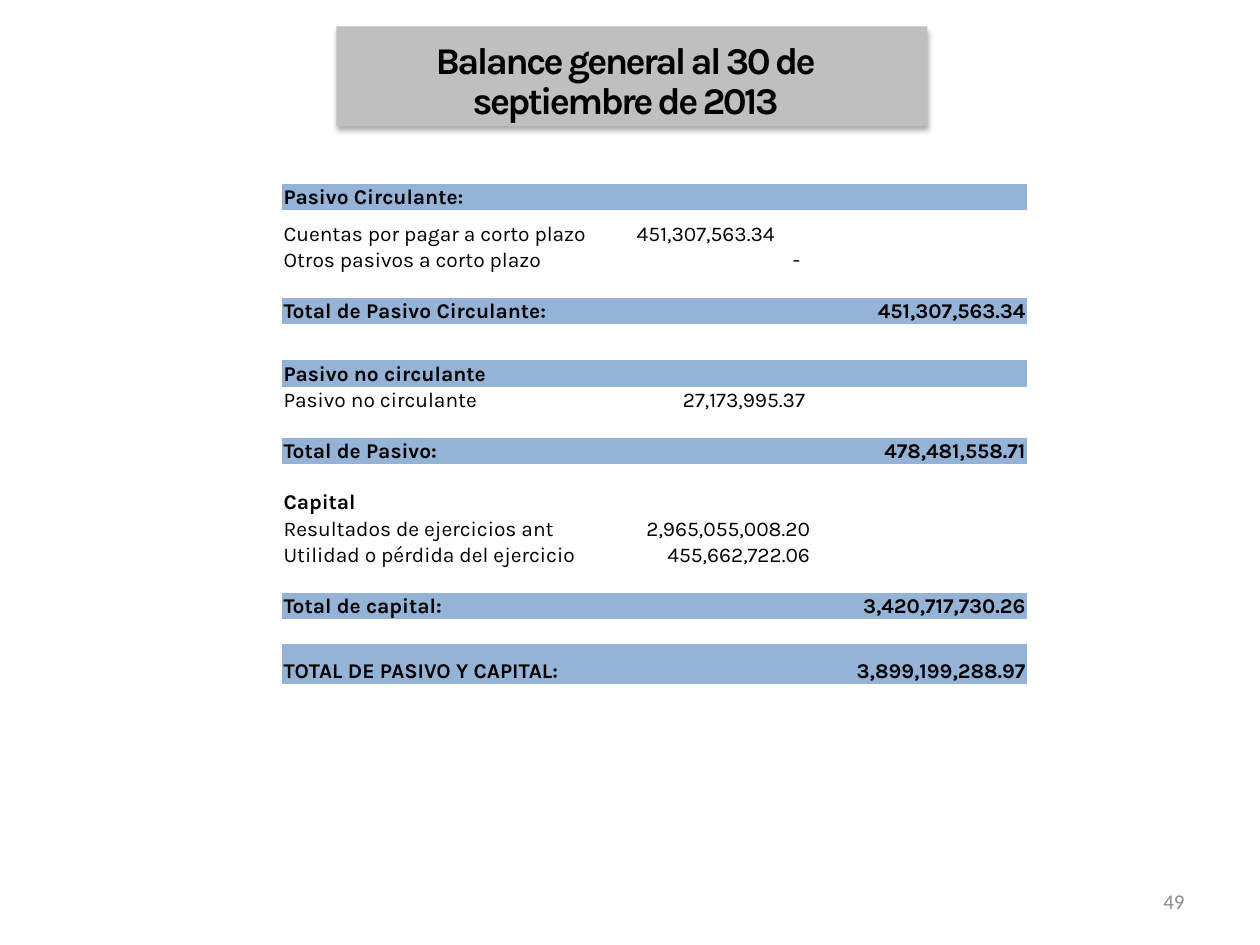
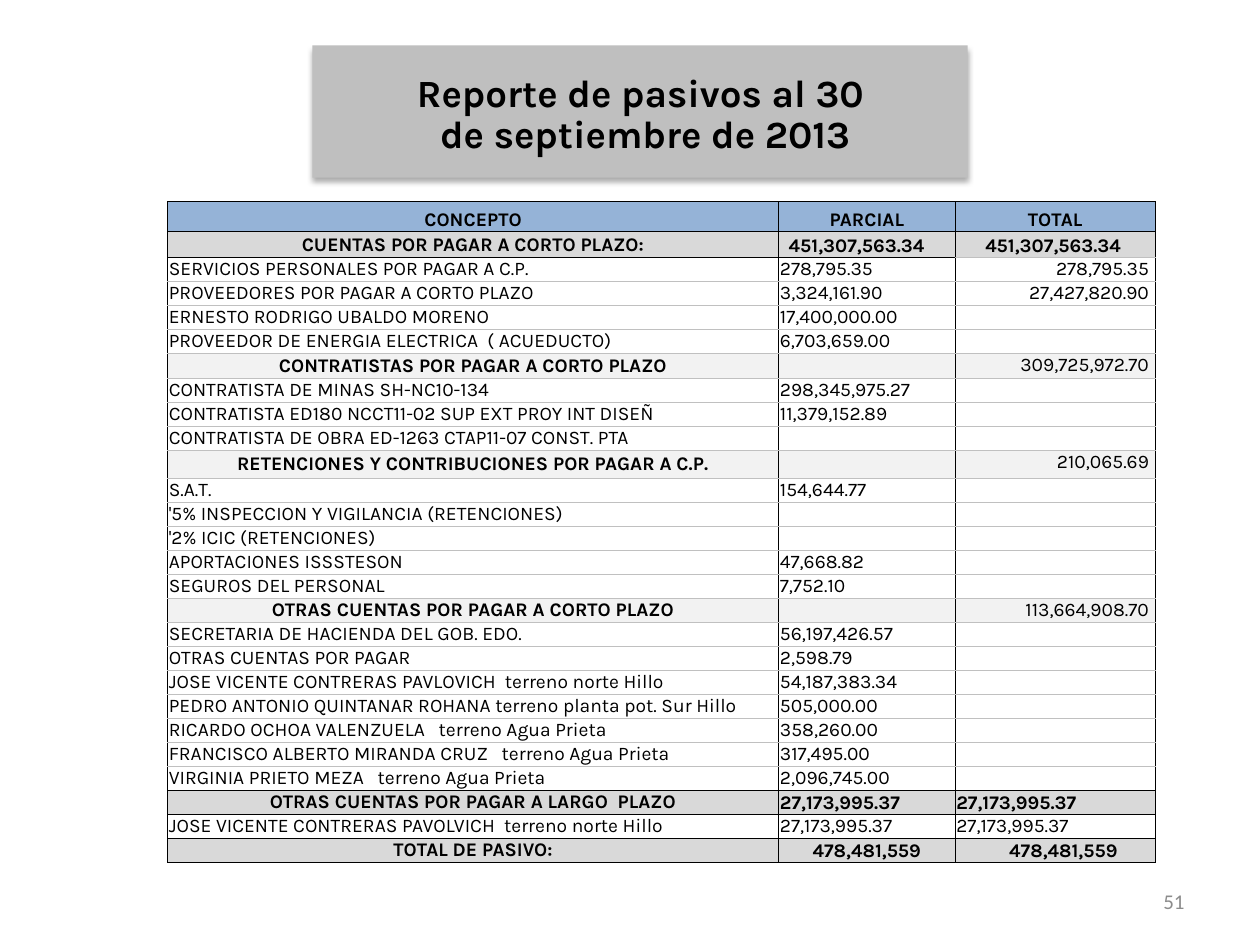
from lxml.etree import SubElement
from pptx import Presentation
from pptx.dml.color import RGBColor
from pptx.enum.shapes import MSO_SHAPE
from pptx.enum.text import MSO_ANCHOR, PP_ALIGN
from pptx.oxml.ns import qn
from pptx.util import Inches, Pt

# Content: balance sheet rows are (band or line, label, amount, total, right inset of the amount)
BALANCE_TITLE = "Balance general al 30 de\nseptiembre de 2013"
GAP = ("line", "", "", "", 0.01)
BALANCE_ROWS = [
    ("band", "Pasivo Circulante:", "", "", 0.01),
    ("line", "Cuentas por pagar a corto plazo", "451,307,563.34", "", 0.29),
    ("line", "Otros pasivos a corto plazo", "-", "", 0.09),
    GAP,
    ("band", "Total de Pasivo Circulante:", "", "451,307,563.34", 0.01),
    GAP,
    ("band", "Pasivo no circulante", "", "", 0.01),
    ("line", "Pasivo no circulante", "27,173,995.37", "", 0.05),
    GAP,
    ("band", "Total de Pasivo:", "", "478,481,558.71", 0.01),
    GAP,
    ("heading", "Capital", "", "", 0.01),
    ("line", "Resultados de ejercicios ant", "2,965,055,008.20", "", 0.01),
    ("line", "Utilidad o pérdida del ejercicio", "455,662,722.06", "", 0.01),
    GAP,
    ("band", "Total de capital:", "", "3,420,717,730.26", 0.01),
    GAP,
    ("band", "TOTAL DE PASIVO Y CAPITAL:", "", "3,899,199,288.97", 0.01),
]
BALANCE_COLUMNS = [2.72, 1.48, 1.71]
BALANCE_TALL_ROWS = {1: 0.29, 5: 0.29, 17: 0.32}

# Content: liabilities rows are (kind, concept, partial, total)
REPORT_TITLE = "Reporte de pasivos al 30 \nde septiembre de 2013"
REPORT_ROWS = [
    ("header", "CONCEPTO", "PARCIAL", "TOTAL"),
    ("total", "CUENTAS POR PAGAR A CORTO PLAZO:", "451,307,563.34", "451,307,563.34"),
    ("item", "SERVICIOS PERSONALES POR PAGAR A C.P.", "278,795.35", "278,795.35"),
    ("item", "PROVEEDORES POR PAGAR A CORTO PLAZO", "3,324,161.90", "27,427,820.90"),
    ("item", "ERNESTO RODRIGO UBALDO MORENO", "17,400,000.00", ""),
    ("item", "PROVEEDOR DE ENERGIA ELECTRICA  ( ACUEDUCTO)", "6,703,659.00", ""),
    ("section", "CONTRATISTAS POR PAGAR A CORTO PLAZO", "", "309,725,972.70"),
    ("item", "CONTRATISTA DE MINAS SH-NC10-134", "298,345,975.27", ""),
    ("item", "CONTRATISTA ED180 NCCT11-02 SUP EXT PROY INT DISEÑ", "11,379,152.89", ""),
    ("item", "CONTRATISTA DE OBRA ED-1263 CTAP11-07 CONST. PTA", "", ""),
    ("section", "RETENCIONES Y CONTRIBUCIONES POR PAGAR A C.P.", "", "210,065.69"),
    ("item", "S.A.T.", "154,644.77", ""),
    ("item", "'5% INSPECCION Y VIGILANCIA (RETENCIONES)", "", ""),
    ("item", "'2% ICIC (RETENCIONES)", "", ""),
    ("item", "APORTACIONES ISSSTESON", "47,668.82", ""),
    ("item", "SEGUROS DEL PERSONAL", "7,752.10", ""),
    ("section", "OTRAS CUENTAS POR PAGAR A CORTO PLAZO", "", "113,664,908.70"),
    ("item", "SECRETARIA DE HACIENDA DEL GOB. EDO.", "56,197,426.57", ""),
    ("item", "OTRAS CUENTAS POR PAGAR", "2,598.79", ""),
    ("item", "JOSE VICENTE CONTRERAS PAVLOVICH  terreno norte Hillo", "54,187,383.34", ""),
    ("item", "PEDRO ANTONIO QUINTANAR ROHANA terreno planta pot. Sur Hillo", "505,000.00", ""),
    ("item", "RICARDO OCHOA VALENZUELA   terreno Agua Prieta", "358,260.00", ""),
    ("item", "FRANCISCO ALBERTO MIRANDA CRUZ   terreno Agua Prieta", "317,495.00", ""),
    ("item", "VIRGINIA PRIETO MEZA   terreno Agua Prieta", "2,096,745.00", ""),
    ("total", "OTRAS CUENTAS POR PAGAR A LARGO  PLAZO", "27,173,995.37", "27,173,995.37"),
    ("item", "JOSE VICENTE CONTRERAS PAVOLVICH  terreno norte Hillo", "27,173,995.37", "27,173,995.37"),
    ("total", "TOTAL DE PASIVO:", "478,481,559", "478,481,559"),
]
REPORT_COLUMNS = [4.85, 1.4, 1.59]
REPORT_TALL_ROWS = {0: 0.24, 1: 0.2, 6: 0.2, 10: 0.22}
LONG_TERM_ROW = 24
REPORT_INDENTS = {(1, 1): 0.08, (1, 2): 0.24, (26, 1): 0.27, (26, 2): 0.43}

# Shared style
BLACK = RGBColor(0x00, 0x00, 0x00)
WHITE = RGBColor(0xFF, 0xFF, 0xFF)
BLUE = RGBColor(0x95, 0xB3, 0xD7)
TITLE_GRAY = RGBColor(0xBF, 0xBF, 0xBF)
PAGE_GRAY = RGBColor(0x8C, 0x8C, 0x8C)
RULE_GRAY = RGBColor(0xC0, 0xC0, 0xC0)
KIND_FILLS = {"header": BLUE, "total": RGBColor(0xD9, 0xD9, 0xD9),
              "section": RGBColor(0xF2, 0xF2, 0xF2), "item": WHITE}
PLAIN_TABLE_STYLE = "{2D5ABB26-0587-4C30-8999-92F81FD0307C}"
LEFT, CENTER, RIGHT = PP_ALIGN.LEFT, PP_ALIGN.CENTER, PP_ALIGN.RIGHT
TOP, MIDDLE, BOTTOM = MSO_ANCHOR.TOP, MSO_ANCHOR.MIDDLE, MSO_ANCHOR.BOTTOM


def write(frame, text, font="Karla", size=12, bold=False, color=BLACK,
          align=LEFT, line_spacing=None, tracking=None):
    para = frame.paragraphs[0]
    para.alignment = align
    para.line_spacing = line_spacing
    for number, line in enumerate(text.split("\n")):
        if number:
            para.add_line_break()
        span = para.add_run()
        span.text = line
        span.font.name, span.font.size = font, Pt(size)
        span.font.bold = bold
        span.font.color.rgb = color
        if tracking:
            span.font._element.set("spc", str(round(tracking * 100)))


def add_text(page, text, place, anchor=TOP, **style):
    box = page.shapes.add_textbox(*map(Inches, place))
    box.text_frame.word_wrap = True
    box.text_frame.vertical_anchor = anchor
    write(box.text_frame, text, **style)


def add_page(deck, title, band_place, title_place, number, **title_style):
    page = deck.slides.add_slide(deck.slide_layouts[6])
    # Gray title band with a soft shadow below it
    band = page.shapes.add_shape(MSO_SHAPE.RECTANGLE, *map(Inches, band_place))
    band.fill.solid()
    band.fill.fore_color.rgb = TITLE_GRAY
    band.line.fill.background()
    band.shadow.inherit = False
    effects = band._element.spPr.find(qn("a:effectLst"))
    shadow = SubElement(effects, qn("a:outerShdw"), blurRad=str(Pt(3.5)),
                        dist=str(Pt(2.2)), dir="5400000", rotWithShape="0")
    tint = SubElement(shadow, qn("a:srgbClr"), val=str(BLACK))
    SubElement(tint, qn("a:alpha"), val="32000")
    # Title and page number
    add_text(page, title, title_place, bold=True, align=CENTER,
             line_spacing=Pt(23), **title_style)
    add_text(page, number, (7.17, 6.95, 2.33, 0.4), anchor=MIDDLE,
             font="Calibri", color=PAGE_GRAY, align=RIGHT)
    return page


def add_grid(page, left, top, columns, heights):
    frame = page.shapes.add_table(len(heights), len(columns), Inches(left), Inches(top),
                                  Inches(sum(columns)), Inches(sum(heights)))
    table = frame.table
    table.first_row = table.horz_banding = False
    table._tbl.tblPr.find(qn("a:tableStyleId")).text = PLAIN_TABLE_STYLE
    for column, width in zip(table.columns, columns):
        column.width = Inches(width)
    for row, height in zip(table.rows, heights):
        row.height = Inches(height)
    return table


def set_borders(cell, **colors):
    for side, color in colors.items():
        line = SubElement(cell._tc.get_or_add_tcPr(), qn(f"a:ln{side}"), w=str(Pt(0.5)))
        paint = SubElement(line, qn("a:solidFill"))
        SubElement(paint, qn("a:srgbClr"), val=str(color))


def fill_cell(cell, text, fill=None, anchor=BOTTOM, left=0.01, right=0.01, **style):
    cell.margin_left, cell.margin_right = Inches(left), Inches(right)
    cell.margin_top, cell.margin_bottom = Pt(0.5), 0
    cell.vertical_anchor = anchor
    if fill is None:
        cell.fill.background()
    else:
        cell.fill.solid()
        cell.fill.fore_color.rgb = fill
    if text:
        write(cell.text_frame, text, **style)
    else:  # keeps an empty cell from stretching its row
        SubElement(cell.text_frame.paragraphs[0]._p, qn("a:endParaRPr"), sz="800")


def build_balance(deck):
    page = add_page(deck, BALANCE_TITLE, (2.67, 0.21, 4.69, 0.79),
                    (3.04, 0.28, 3.85, 0.5), "49", size=21.6, tracking=-1.5)
    heights = [BALANCE_TALL_ROWS.get(row, 0.2) for row in range(len(BALANCE_ROWS))]
    table = add_grid(page, 2.24, 1.46, BALANCE_COLUMNS, heights)
    for row, (kind, label, amount, total, inset) in enumerate(BALANCE_ROWS):
        look = dict(fill=BLUE if kind == "band" else None, bold=kind != "line")
        fill_cell(table.cell(row, 0), label, **look)
        fill_cell(table.cell(row, 1), amount, align=RIGHT, right=inset, **look)
        fill_cell(table.cell(row, 2), total, align=RIGHT, **look)


def report_format(row, column, kind):
    """Bold, alignment, anchor and insets of one cell of the liabilities table."""
    if kind == "header":
        return dict(bold=True, align=CENTER, anchor=BOTTOM)
    if column == 0:
        heading = kind != "item"
        return dict(bold=heading, align=CENTER if heading else LEFT,
                    anchor=MIDDLE if heading else TOP)
    if kind == "total":
        return dict(bold=True, anchor=BOTTOM, left=REPORT_INDENTS.get((row, column), 0.01))
    if column == 2 and row < LONG_TERM_ROW:
        return dict(align=RIGHT, anchor=TOP, right=0.05)
    return dict(anchor=TOP)


def build_report(deck):
    page = add_page(deck, REPORT_TITLE, (2.48, 0.36, 5.2, 1.05),
                    (2.72, 0.55, 4.8, 0.83), "51", size=22)
    heights = [REPORT_TALL_ROWS.get(row, 0.18) for row in range(len(REPORT_ROWS))]
    table = add_grid(page, 1.33, 1.6, REPORT_COLUMNS, heights)
    strong = [kind in ("header", "total") for kind, *_ in REPORT_ROWS]

    def edge_color(edge, column):
        # Black next to the header and the totals, except under the first total
        near_strong = any(strong[max(edge - 1, 0):edge + 1])
        return BLACK if near_strong and (edge, column) != (2, 2) else RULE_GRAY

    for row, (kind, *texts) in enumerate(REPORT_ROWS):
        for column, text in enumerate(texts):
            cell = table.cell(row, column)
            set_borders(cell, L=BLACK, R=BLACK, T=edge_color(row, column),
                        B=edge_color(row + 1, column))
            fill_cell(cell, text, fill=KIND_FILLS[kind], size=11,
                      **report_format(row, column, kind))


def main():
    deck = Presentation()
    deck.slide_width, deck.slide_height = Inches(10), Inches(7.5)
    build_balance(deck)
    build_report(deck)
    deck.save("out.pptx")


if __name__ == "__main__":
    main()
